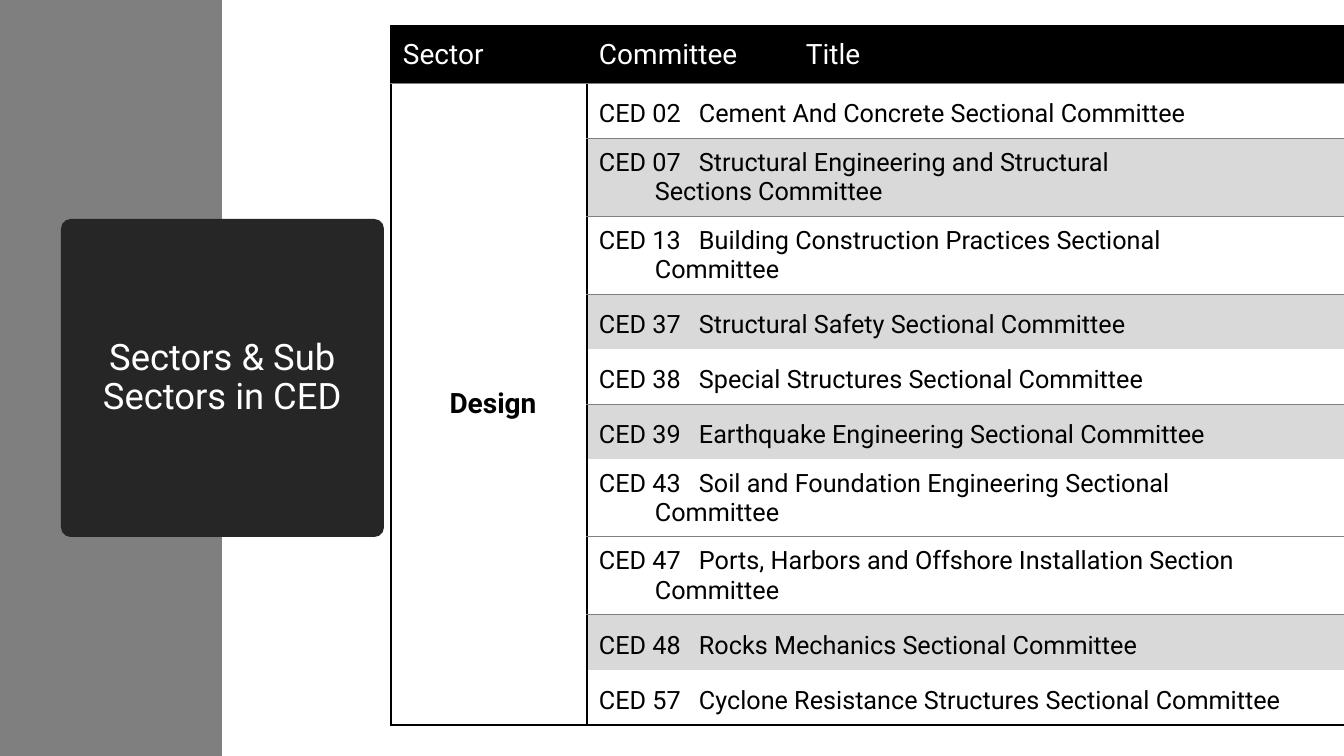
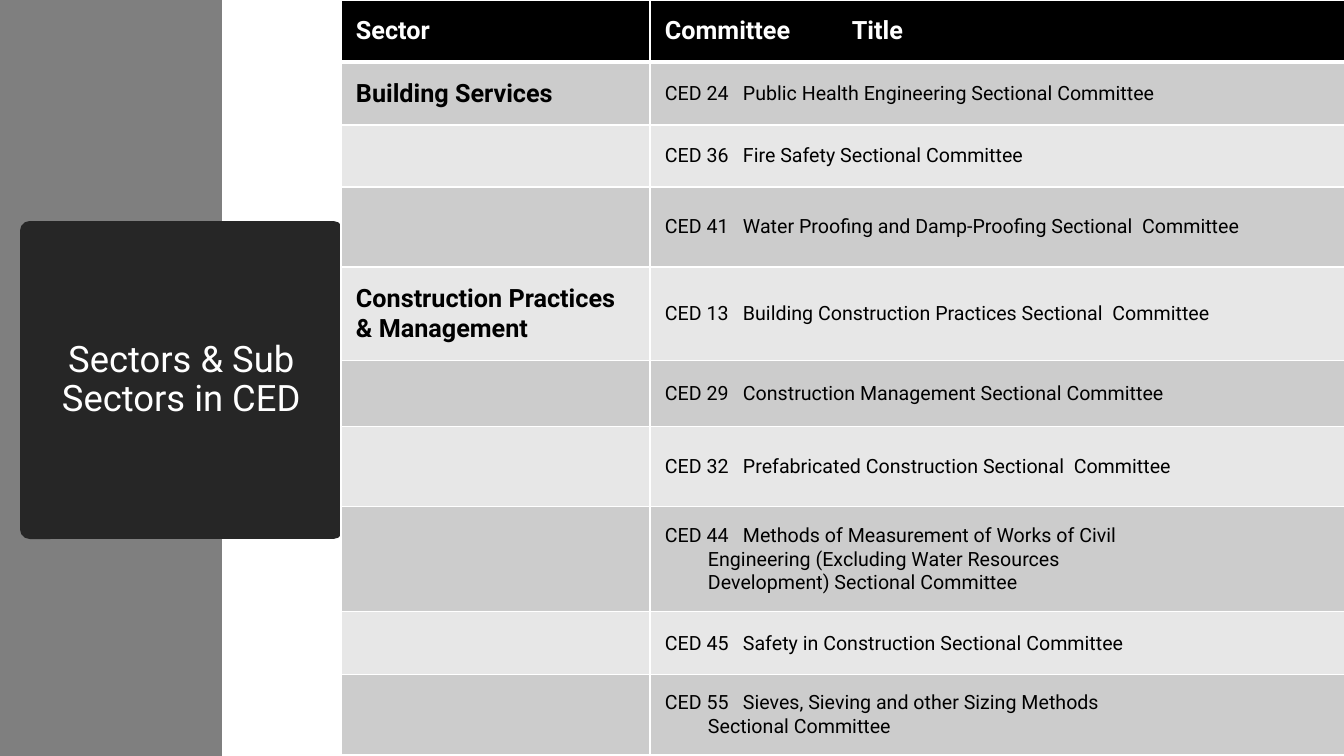
from dataclasses import dataclass

from lxml.etree import SubElement
from pptx import Presentation
from pptx.dml.color import RGBColor
from pptx.enum.shapes import MSO_SHAPE as Shape
from pptx.enum.text import MSO_ANCHOR as Anchor, PP_ALIGN as Align
from pptx.oxml.ns import qn
from pptx.util import Pt

PX = 914400 / 100.8
SLIDE_W, SLIDE_H = 1344, 756
TITLE = "Sectors & Sub Sectors in CED"


@dataclass(frozen=True)
class Theme:
    font: str = "Roboto"
    white: str = "FFFFFF"
    black: str = "000000"
    band: str = "7F7F7F"
    title_box: str = "262626"
    rule: str = "808080"
    shaded: str = "D9D9D9"
    stripes: tuple = ("CCCCCC", "E7E7E7")
    title_size: int = 26
    large: int = 20
    medium: int = 18
    small: int = 14


@dataclass(frozen=True)
class TableLook:
    insets: tuple
    header_tab: int
    title_tab: int
    hang: int
    body_size: int


THEME = Theme()
DESIGN_LOOK = TableLook((12, 9, 4, 9), 207, 100, 56, THEME.medium)
SECTOR_LOOK = TableLook((15, 15, 15, 15), 187, 78, 43, THEME.small)
HEADER = ("Sector", "Committee\tTitle")

DESIGN_COMMITTEES = [
    (False, "CED 02", "Cement And Concrete Sectional Committee"),
    (True, "CED 07", "Structural Engineering and Structural", "Sections Committee"),
    (False, "CED 13", "Building Construction Practices Sectional", "Committee"),
    (True, "CED 37", "Structural Safety Sectional Committee"),
    (False, "CED 38", "Special Structures Sectional Committee"),
    (True, "CED 39", "Earthquake Engineering Sectional Committee"),
    (False, "CED 43", "Soil and Foundation Engineering Sectional", "Committee"),
    (False, "CED 47", "Ports, Harbors and Offshore Installation Section", "Committee"),
    (True, "CED 48", "Rocks Mechanics Sectional Committee"),
    (False, "CED 57", "Cyclone Resistance Structures Sectional Committee"),
]

SECTOR_COMMITTEES = [
    (63, "Building Services", "CED 24", "Public Health Engineering Sectional Committee"),
    (62, "", "CED 36", "Fire Safety Sectional Committee"),
    (80, "", "CED 41", "Water Proofing and Damp-Proofing Sectional  Committee"),
    (94, "Construction Practices & Management", "CED 13",
     "Building Construction Practices Sectional  Committee"),
    (66, "", "CED 29", "Construction Management Sectional Committee"),
    (80, "", "CED 32", "Prefabricated Construction Sectional  Committee"),
    (105, "", "CED 44", "Methods of Measurement of Works of Civil",
     "Engineering (Excluding Water Resources", "Development) Sectional Committee"),
    (63, "", "CED 45", "Safety in Construction Sectional Committee"),
    (80, "", "CED 55", "Sieves, Sieving and other Sizing Methods", "Sectional Committee"),
]


def px(length):
    return round(length * PX)


def rgb(color):
    return RGBColor.from_string(color)


def style_text(paragraph, size, color, bold=False, align=Align.LEFT):
    paragraph.alignment = align
    font = paragraph.font
    font.name, font.size, font.bold = THEME.font, Pt(size), bold
    font.color.rgb = rgb(color)


def add_block(slide, kind, left, top, width, height, color):
    block = slide.shapes.add_shape(kind, px(left), px(top), px(width), px(height))
    block.shadow.inherit = False
    block.fill.solid()
    block.fill.fore_color.rgb = rgb(color)
    block.line.fill.background()
    return block


def add_title_panel(slide, left, top):
    add_block(slide, Shape.RECTANGLE, 0, 0, 222, SLIDE_H, THEME.band)
    panel = add_block(slide, Shape.ROUNDED_RECTANGLE, left, top, 323, 318, THEME.title_box)
    panel.adjustments[0] = 0.03
    frame = panel.text_frame
    frame.word_wrap = True
    frame.vertical_anchor = Anchor.MIDDLE
    heading = frame.paragraphs[0]
    heading.text = TITLE
    heading.line_spacing = 0.9
    style_text(heading, THEME.title_size, THEME.white, align=Align.CENTER)


def add_grid(slide, left, top, widths, heights):
    grid = slide.shapes.add_table(len(heights), len(widths), px(left), px(top),
                                  px(sum(widths)), px(sum(heights))).table
    grid.horz_banding = False
    for column, width in zip(grid.columns, widths):
        column.width = px(width)
    for row, height in zip(grid.rows, heights):
        row.height = px(height)
    return grid


def style_cell(cell, look, color, borders, anchor=Anchor.MIDDLE):
    cell.margin_left, cell.margin_top, cell.margin_right, cell.margin_bottom = map(px, look.insets)
    cell.vertical_anchor = anchor
    cell.fill.solid()
    cell.fill.fore_color.rgb = rgb(color)
    properties = cell._tc.get_or_add_tcPr()
    for position, side in enumerate("LRTB"):
        edge = SubElement(properties, qn(f"a:ln{side}"))
        if borders.get(side):
            edge_color, weight = borders[side]
            edge.set("w", str(Pt(weight)))
            solid = SubElement(edge, qn("a:solidFill"))
            SubElement(solid, qn("a:srgbClr"), val=edge_color)
        else:
            SubElement(edge, qn("a:noFill"))
        properties.insert(position, edge)


def add_tab(paragraph, position):
    properties = paragraph._p.get_or_add_pPr()
    stops = SubElement(properties, qn("a:tabLst"))
    SubElement(stops, qn("a:tab"), pos=str(px(position)), algn="l")
    properties.insert(0, stops)


def write_label(cell, text, size, color, bold=False, align=Align.LEFT, tab=None):
    label = cell.text_frame.paragraphs[0]
    label.text = text
    style_text(label, size, color, bold, align)
    if tab:
        add_tab(label, tab)


def write_committee(cell, look, code, first_line, *more_lines):
    write_label(cell, f"{code}\t{first_line}", look.body_size, THEME.black, tab=look.title_tab)
    for line in more_lines:
        continuation = cell.text_frame.add_paragraph()
        continuation.text = line
        style_text(continuation, look.body_size, THEME.black)
        properties = continuation._p.get_or_add_pPr()
        properties.set("marL", str(px(look.hang)))
        properties.set("indent", "0")


def write_header(grid, look, size, bold, borders):
    for column, (text, tab) in enumerate(zip(HEADER, (None, look.header_tab))):
        cell = grid.cell(0, column)
        style_cell(cell, look, THEME.black, borders)
        write_label(cell, text, size, THEME.white, bold, tab=tab)


def add_design_table(slide):
    look = DESIGN_LOOK
    heights = [57] + [78 if len(entry) > 3 else 55 for entry in DESIGN_COMMITTEES]
    grid = add_grid(slide, 391, 26, (196, 758), heights)
    frame, rule = (THEME.black, 1.5), (THEME.rule, 0.5)
    sides = {"L": frame, "R": frame}
    write_header(grid, look, THEME.large, False, {**sides, "T": frame, "B": rule})

    last = len(DESIGN_COMMITTEES)
    above = rule
    for row, (shaded, code, *lines) in enumerate(DESIGN_COMMITTEES, 1):
        below = frame if row == last else None if shaded and len(lines) == 1 else rule
        cell = grid.cell(row, 1)
        style_cell(cell, look, THEME.shaded if shaded else THEME.white,
                   {**sides, "T": above, "B": below}, Anchor.BOTTOM)
        write_committee(cell, look, code, *lines)
        style_cell(grid.cell(row, 0), look, THEME.white,
                   {**sides, "T": rule if row == 1 else None,
                    "B": frame if row in (1, last) else None})
        above = below
    sector = grid.cell(1, 0)
    sector.merge(grid.cell(last, 0))
    write_label(sector, "Design", THEME.large, THEME.black, True, Align.CENTER)


def add_sector_table(slide):
    look = SECTOR_LOOK
    grid = add_grid(slide, 341, 0, (309, 695), [62] + [entry[0] for entry in SECTOR_COMMITTEES])
    thin, thick = (THEME.white, 1), (THEME.white, 3)
    borders = dict.fromkeys("LRTB", thin)
    write_header(grid, look, THEME.medium, True, {**borders, "B": thick})
    for row, (_, sector, *committee) in enumerate(SECTOR_COMMITTEES, 1):
        stripe = THEME.stripes[(row - 1) % 2]
        for column in range(2):
            style_cell(grid.cell(row, column), look, stripe,
                       {**borders, "T": thick if row == 1 else thin})
        write_label(grid.cell(row, 0), sector, THEME.medium, THEME.black, True)
        write_committee(grid.cell(row, 1), look, *committee)


def main():
    deck = Presentation()
    deck.slide_width, deck.slide_height = px(SLIDE_W), px(SLIDE_H)
    for left, top, add_table in ((61, 219, add_design_table), (20, 221, add_sector_table)):
        slide = deck.slides.add_slide(deck.slide_layouts[6])
        add_title_panel(slide, left, top)
        add_table(slide)
    deck.save("out.pptx")


if __name__ == "__main__":
    main()
